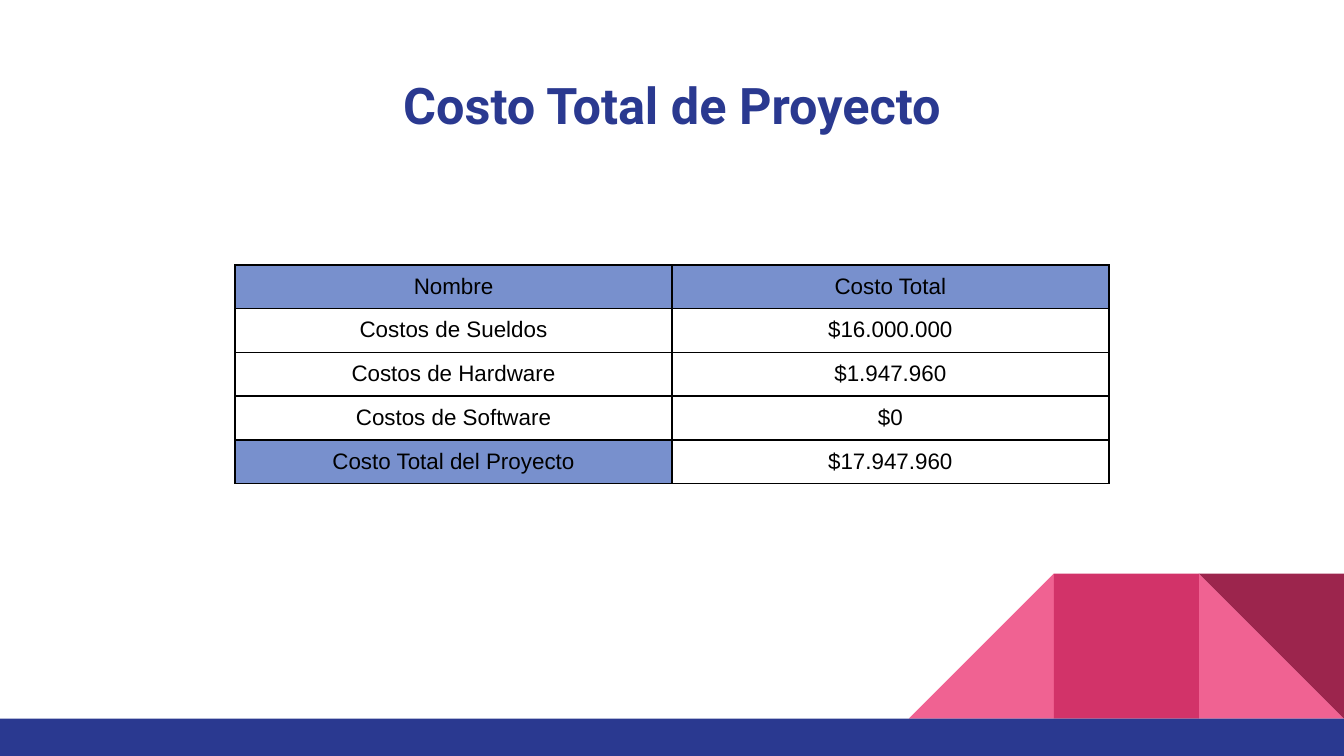
from dataclasses import dataclass

from lxml.etree import SubElement
from pptx import Presentation
from pptx.dml.color import RGBColor
from pptx.enum.shapes import MSO_SHAPE as Preset
from pptx.enum.text import MSO_ANCHOR as Anchor, PP_ALIGN as Align
from pptx.oxml.ns import qn
from pptx.util import Pt


@dataclass(frozen=True)
class Theme:
    navy: str = "2A3990"
    pink: str = "F06292"
    magenta: str = "D23369"
    wine: str = "9C254D"
    header: str = "7890CD"
    white: str = "FFFFFF"
    black: str = "000000"
    title_font: str = "Roboto"
    table_font: str = "Arial"
    title_size: float = 27
    table_size: float = 12
    border: float = 1


THEME = Theme()
WIDTH, HEIGHT = 720, 405
COSTS = [
    ("Nombre", "Costo Total"),
    ("Costos de Sueldos", "$16.000.000"),
    ("Costos de Hardware", "$1.947.960"),
    ("Costos de Software", "$0"),
    ("Costo Total del Proyecto", "$17.947.960"),
]


def style_paragraph(paragraph, font_name, size, color, bold=False):
    paragraph.alignment = Align.CENTER
    paragraph.font.name = font_name
    paragraph.font.size = Pt(size)
    paragraph.font.bold = bold
    paragraph.font.color.rgb = RGBColor.from_string(color)


def set_margins(target, margin):
    target.margin_left = target.margin_right = Pt(margin)
    target.margin_top = target.margin_bottom = Pt(margin)


def add_block(slide, preset, left, top, width, height, color):
    shape = slide.shapes.add_shape(preset, Pt(left), Pt(top), Pt(width), Pt(height))
    shape.shadow.inherit = False
    shape.fill.solid()
    shape.fill.fore_color.rgb = RGBColor.from_string(color)
    shape.line.fill.background()
    return shape


def add_footer(slide, left, top, width, height, band_height):
    side = height - band_height
    right = left + width
    add_block(slide, Preset.RIGHT_TRIANGLE, right - side, top, side, side, THEME.pink)
    slope = add_block(slide, Preset.RIGHT_TRIANGLE, right - 3 * side, top, side, side, THEME.pink)
    slope.element.spPr.get_or_add_xfrm().set("flipH", "1")
    add_block(slide, Preset.RECTANGLE, right - 2 * side, top, side, side, THEME.magenta)
    corner = add_block(slide, Preset.RIGHT_TRIANGLE, right - side, top, side, side, THEME.wine)
    corner.rotation = 180
    add_block(slide, Preset.RECTANGLE, left, top + side, width, band_height, THEME.navy)


def add_title(slide, text, left, top, width, height):
    title = slide.shapes.title
    title.left, title.top = Pt(left), Pt(top)
    title.width, title.height = Pt(width), Pt(height)
    frame = title.text_frame
    frame.text = text
    frame.word_wrap = True
    frame.vertical_anchor = Anchor.TOP
    set_margins(frame, 7.2)
    style_paragraph(frame.paragraphs[0], THEME.title_font, THEME.title_size, THEME.navy, True)


def set_borders(cell):
    properties = cell._tc.get_or_add_tcPr()
    for position, edge in enumerate(("a:lnL", "a:lnR", "a:lnT", "a:lnB")):
        line = SubElement(properties, qn(edge), w=str(Pt(THEME.border)))
        fill = SubElement(line, qn("a:solidFill"))
        SubElement(fill, qn("a:srgbClr"), val=THEME.black)
        properties.insert(position, line)


def add_cost_table(slide, rows, left, top, width, height):
    last = len(rows) - 1
    table = slide.shapes.add_table(
        len(rows), len(rows[0]), Pt(left), Pt(top), Pt(width), Pt(height)
    ).table
    table.first_row = table.horz_banding = False
    for row_index, values in enumerate(rows):
        for column_index, value in enumerate(values):
            cell = table.cell(row_index, column_index)
            cell.text = value
            set_margins(cell, 4.8)
            highlighted = row_index == 0 or (row_index == last and column_index == 0)
            cell.fill.solid()
            cell.fill.fore_color.rgb = RGBColor.from_string(
                THEME.header if highlighted else THEME.white
            )
            style_paragraph(
                cell.text_frame.paragraphs[0], THEME.table_font, THEME.table_size, THEME.black
            )
            set_borders(cell)


def main():
    presentation = Presentation()
    presentation.slide_width, presentation.slide_height = Pt(WIDTH), Pt(HEIGHT)
    slide = presentation.slides.add_slide(presentation.slide_layouts[5])
    add_footer(slide, 0, 307.3, WIDTH, HEIGHT - 307.3, 20)
    add_title(slide, "Costo Total de Proyecto", 24.5, 32.4, 671, 78.5)
    add_cost_table(slide, COSTS, 126, 141.9, 468, 117.25)
    presentation.save("out.pptx")


if __name__ == "__main__":
    main()
